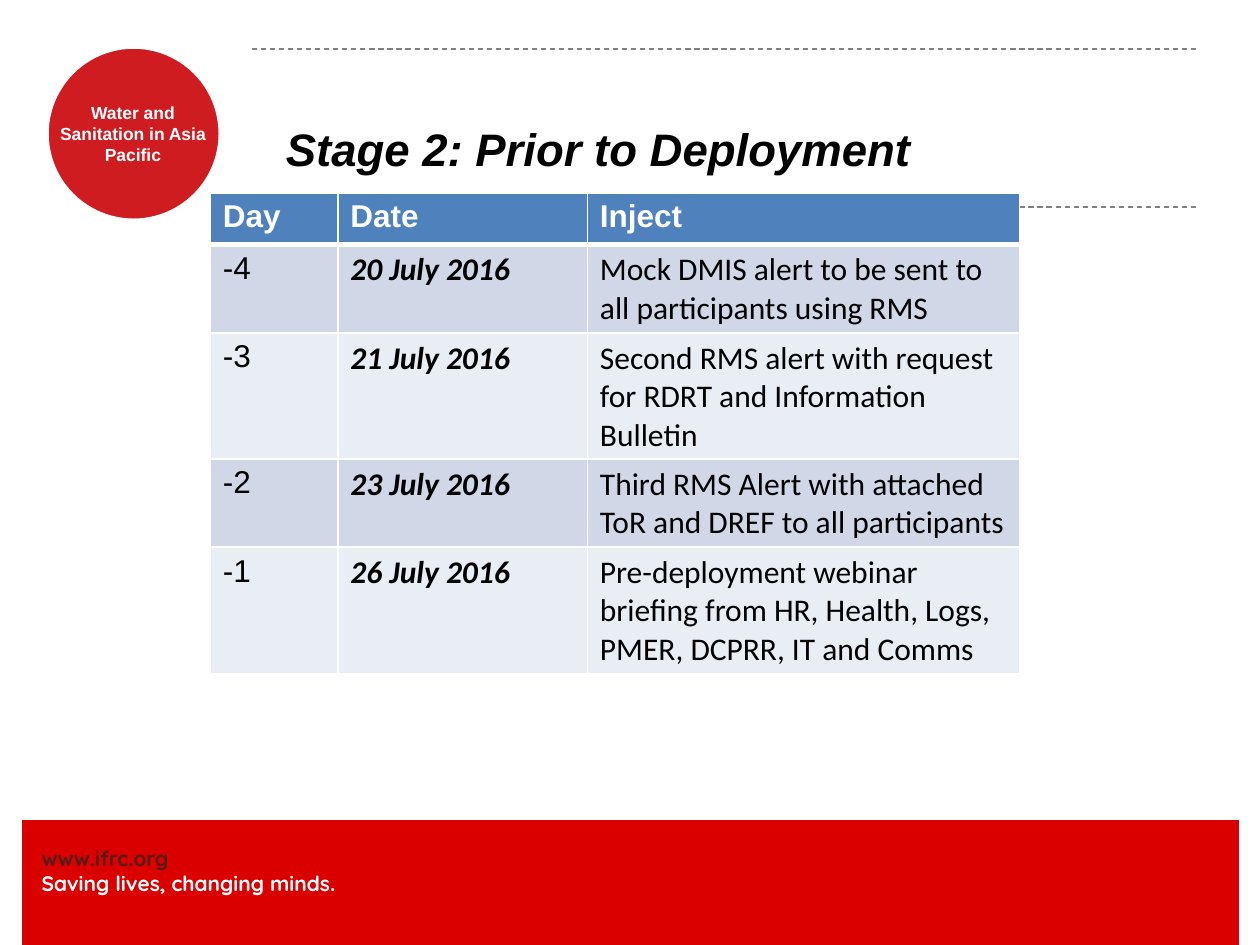
from lxml import etree
from pptx import Presentation
from pptx import util as u
from pptx.dml.color import RGBColor
from pptx.enum import dml, shapes, text
from pptx.oxml.ns import qn


def color(h):
    return RGBColor.from_string(h)


def add_run(p, words, size, font, h, bold=False, italic=False):
    r = p.add_run()
    r.text = words
    r.font.size = u.Pt(size)
    r.font.name = font
    r.font.color.rgb = color(h)
    r.font.bold = bold
    r.font.italic = italic


prs = Presentation()
prs.slide_width, prs.slide_height = u.Cm(25.4), u.Cm(19.05)
s = prs.slides.add_slide(prs.slide_layouts[5])

footer = (shapes.MSO_SHAPE.RECTANGLE, 0.43, 16.51, 24.56, 2.72, "DB0000", 0.75)
badge = (shapes.MSO_SHAPE.OVAL, 0.94, 0.94, 3.51, 3.51, "CF1C21", 2.5)
for kind, x, y, w, h, fill, weight in (footer, badge):
    sp = s.shapes.add_shape(kind, u.Cm(x), u.Cm(y), u.Cm(w), u.Cm(h))
    sp.shadow.inherit = False
    sp.fill.solid()
    sp.fill.fore_color.rgb = color(fill)
    sp.line.color.rgb = color("FFFFFF")
    sp.line.width = u.Pt(weight)

left, center = text.PP_ALIGN.LEFT, text.PP_ALIGN.CENTER
labels = [
    (0.84, 17.04, 8.69, 1.02, left, 12, "Quicksand",
     [("www.ifrc.org", "551C15"), ("Saving lives, changing minds.", "FFFFFF")]),
    (1.09, 2.06, 3.18, 1.3, center, 10, "Arial",
     [("Water and Sanitation in Asia Pacific", "FFFFFF")]),
]
for x, y, w, h, align, size, font, lines in labels:
    tf = s.shapes.add_textbox(u.Cm(x), u.Cm(y), u.Cm(w), u.Cm(h)).text_frame
    tf.word_wrap = True
    tf.margin_left = tf.margin_top = tf.margin_right = tf.margin_bottom = 0
    for i, (words, c) in enumerate(lines):
        p = tf.add_paragraph() if i else tf.paragraphs[0]
        p.alignment = align
        add_run(p, words, size, font, c, bold=True)

for y in (0.99, 4.17):
    cx = s.shapes.add_connector(shapes.MSO_CONNECTOR.STRAIGHT,
                                u.Cm(5.08), u.Cm(y), u.Cm(24.13), u.Cm(y))
    cx.line.color.rgb = color("808080")
    cx.line.width = u.Pt(0.75)
    cx.line.dash_style = dml.MSO_LINE.DASH
    etree.SubElement(cx._element.spPr, qn("a:effectLst"))

title = s.shapes.title
title.left, title.top = u.Cm(5.51), u.Cm(1.4)
title.width, title.height = u.Cm(19.05), u.Cm(3.18)
tf = title.text_frame
tf.auto_size = text.MSO_AUTO_SIZE.NONE
tf.vertical_anchor = text.MSO_ANCHOR.MIDDLE
p = tf.paragraphs[0]
p.alignment = left
add_run(p, "Stage 2: Prior to Deployment", 26, "Arial", "000000", True, True)

rows = [
    ("Day", "Date", "Inject"),
    ("-4", "20 July 2016", "Mock DMIS alert to be sent to all participants using RMS"),
    ("-3", "21 July 2016", "Second RMS alert with request for RDRT and Information Bulletin"),
    ("-2", "23 July 2016", "Third RMS Alert with attached ToR and DREF to all participants"),
    ("-1", "26 July 2016", "Pre-deployment webinar briefing from HR, Health, Logs, PMER, DCPRR, IT and Comms"),
]
widths = (2.57, 5.03, 8.71)
heights = (1.04, 1.78, 2.54, 1.78, 2.54)
table = s.shapes.add_table(len(rows), len(widths), u.Cm(4.24), u.Cm(3.89),
                           u.Cm(sum(widths)), u.Cm(sum(heights))).table
for col, w in zip(table.columns, widths):
    col.width = u.Cm(w)
for i, row in enumerate(rows):
    table.rows[i].height = u.Cm(heights[i])
    for j, words in enumerate(row):
        cell = table.cell(i, j)
        tcPr = cell._tc.get_or_add_tcPr()
        for side in ("lnL", "lnR", "lnT", "lnB"):
            thick = (i, side) in ((0, "lnB"), (1, "lnT"))
            ln = etree.SubElement(tcPr, qn("a:" + side), w=str(u.Pt(3 if thick else 1)))
            fill = etree.SubElement(ln, qn("a:solidFill"))
            etree.SubElement(fill, qn("a:srgbClr"), val="FFFFFF")
        cell.fill.solid()
        cell.fill.fore_color.rgb = color("4F81BD" if i == 0 else "D0D8E8" if i % 2 else "E9EDF4")
        date = i > 0 and j == 1
        add_run(cell.text_frame.paragraphs[0], words, 18,
                "Calibri" if i and j else "Arial",
                "000000" if i else "FFFFFF", bold=i == 0 or date, italic=date)

prs.save("out.pptx")
